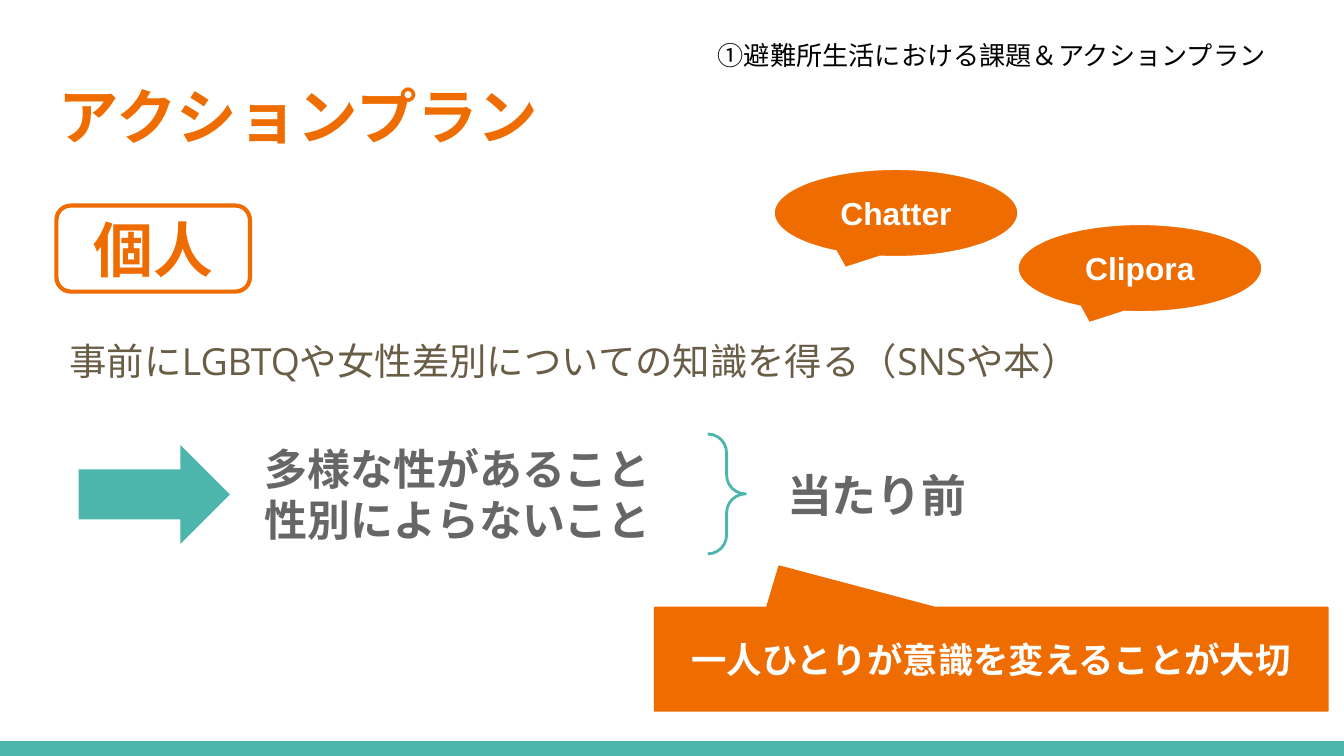
from lxml import etree
from pptx import Presentation
from pptx import util as u
from pptx.dml.color import RGBColor
from pptx.enum import shapes, text
from pptx.oxml.ns import qn

ORANGE = RGBColor(0xEF, 0x6C, 0x00)
TEAL = RGBColor(0x4D, 0xB6, 0xAC)
WHITE = RGBColor(0xFF, 0xFF, 0xFF)
BLACK = RGBColor(0, 0, 0)
GRAY = RGBColor(0x66, 0x66, 0x66)
BROWN = RGBColor(0x69, 0x5D, 0x46)

WIDTH = 10
HEIGHT = WIDTH * 9 / 16
KIND = shapes.MSO_SHAPE
CENTER = text.PP_ALIGN.CENTER
LEFT = text.PP_ALIGN.LEFT


def within(box, left, top, width, height):
    """Return a part of box, given as shares of its size."""
    x, y, w, h = box
    return x + left * w, y + top * h, width * w, height * h


def write(shape, lines, size, font, color, bold=False, align=LEFT, spacing=None):
    frame = shape.text_frame
    frame.word_wrap = True
    frame.margin_left = frame.margin_right = u.Inches(0.1)
    frame.margin_top = frame.margin_bottom = u.Inches(0.1)
    for index, line in enumerate(lines):
        para = frame.add_paragraph() if index else frame.paragraphs[0]
        para.alignment = align
        if spacing:
            para.line_spacing = spacing
        span = para.add_run()
        span.text = line
        span.font.size = u.Pt(size)
        span.font.name = font
        span.font.bold = bold
        span.font.color.rgb = color
        east_asian = etree.SubElement(span.font._element, qn("a:ea"))
        east_asian.set("typeface", font)


def add_text(page, box, lines, size, color, font="Open Sans", **style):
    label = page.shapes.add_textbox(*map(u.Inches, box))
    write(label, lines, size, font, color, **style)


def add_figure(page, kind, box, fill=None, line=None, weight=0.75, adjust=()):
    figure = page.shapes.add_shape(kind, *map(u.Inches, box))
    figure.shadow.inherit = False
    if fill is None:
        figure.fill.background()
    else:
        figure.fill.solid()
        figure.fill.fore_color.rgb = fill
    if line is None:
        figure.line.fill.background()
    else:
        figure.line.color.rgb = line
        figure.line.width = u.Pt(weight)
    for index, value in enumerate(adjust):
        figure.adjustments[index] = value
    figure.text_frame.vertical_anchor = text.MSO_ANCHOR.MIDDLE
    return figure


def add_header(page, box):
    x, y, w, h = box
    add_text(page, (x, y + 0.3, w, 0.77), ["アクションプラン"], 32.4, ORANGE,
             font="Arial Narrow", bold=True)
    add_text(page, within(box, 0.526, 0, 0.474, 0.41),
             ["①避難所生活における課題＆アクションプラン"], 14, BLACK)


def add_badge(page, box):
    badge = add_figure(page, KIND.ROUNDED_RECTANGLE, box, WHITE, ORANGE, 2.25, [0.167])
    write(badge, ["個人"], 32, "Arial", ORANGE, bold=True, align=CENTER)


def add_media_bubbles(page, box, names):
    """Step equal speech bubbles down from left to right across the box."""
    x, y, w, h = box
    width, height = w / len(names), 0.65
    drop = (h - height) / (len(names) - 1)
    for index, name in reversed(list(enumerate(names))):
        bubble = add_figure(page, KIND.OVAL_CALLOUT,
                            (x + index * width, y + index * drop, width, height),
                            ORANGE, WHITE, adjust=[-0.208, 0.625])
        write(bubble, [name], 17, "Arial", WHITE, bold=True, align=CENTER)


def add_conclusion(page, box):
    """Arrow, two statements, brace and what they amount to."""
    add_figure(page, KIND.RIGHT_ARROW, within(box, 0, 0.11, 0.146, 0.78), TEAL, WHITE)
    add_text(page, within(box, 0.165, 0, 0.93, 1),
             ["多様な性があること", "性別によらないこと"], 23, GRAY, bold=True)
    add_figure(page, KIND.RIGHT_BRACE, within(box, 0.6, 0.04, 0.036, 0.91),
               line=TEAL, weight=1.5, adjust=[0.5, 0.5])
    add_text(page, within(box, 0.663, 0.19, 0.337, 0.62), ["当たり前"], 24, GRAY, bold=True)


def add_key_message(page, box):
    callout = add_figure(page, KIND.ROUNDED_RECTANGULAR_CALLOUT, box, ORANGE, ORANGE,
                         adjust=[-0.315, -0.9, 0])
    write(callout, ["一人ひとりが意識を変えることが大切"], 19, "Arial", WHITE,
          bold=True, align=CENTER)


def main():
    deck = Presentation()
    deck.slide_width, deck.slide_height = u.Inches(WIDTH), u.Inches(HEIGHT)
    page = deck.slides.add_slide(deck.slide_layouts[6])
    add_figure(page, KIND.RECTANGLE, (0, HEIGHT - 0.11, WIDTH, 0.11), TEAL)
    add_header(page, (0.34, 0.19, 9.32, 1.07))
    add_badge(page, (0.42, 1.53, 1.44, 0.64))
    add_text(page, (0.42, 2.44, 8.74, 0.74),
             ["事前にLGBTQや女性差別についての知識を得る（SNSや本）"], 20, BROWN, spacing=0.95)
    add_conclusion(page, (0.58, 3.19, 7.81, 0.98))
    add_key_message(page, (4.87, 4.52, 5.01, 0.77))
    add_media_bubbles(page, (5.76, 1.26, 3.63, 1.06), ["Chatter", "Clipora"])
    deck.save("out.pptx")


if __name__ == "__main__":
    main()
